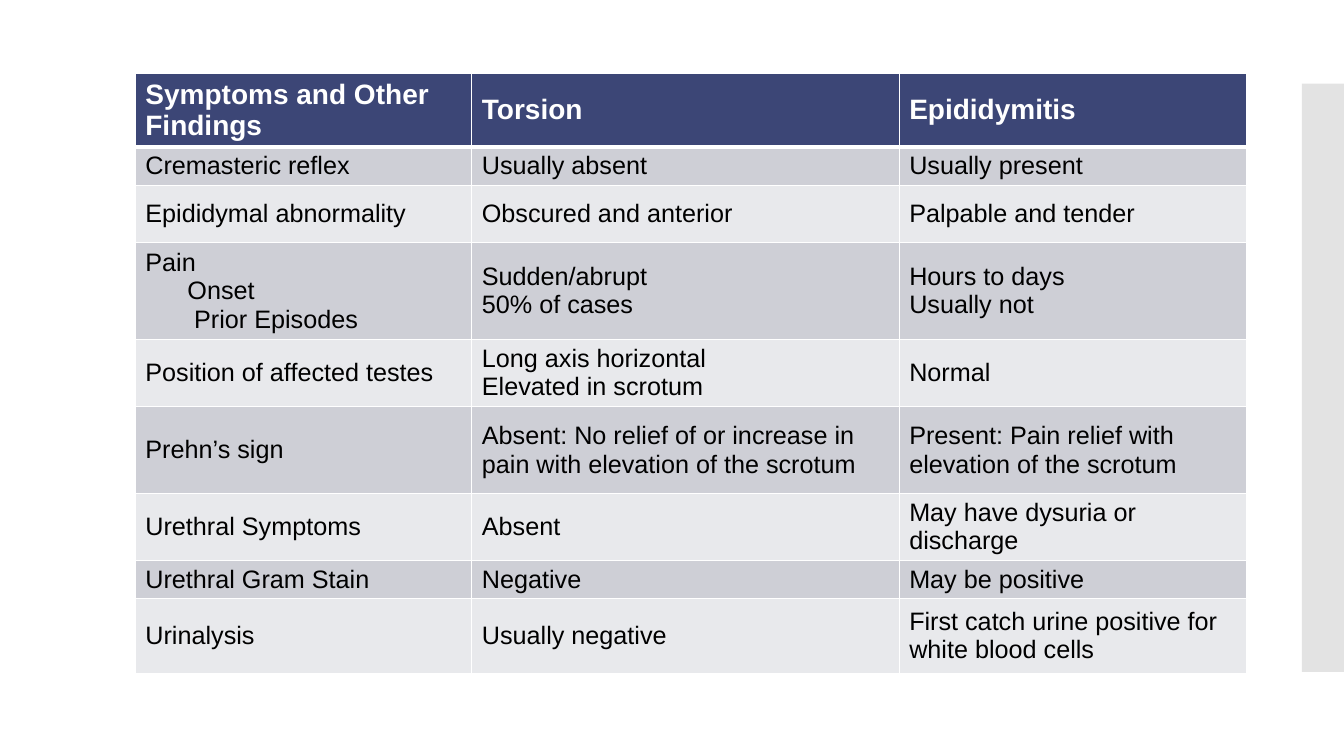
import dataclasses

import lxml.etree
import pptx
import pptx.dml.color
import pptx.enum.shapes
import pptx.enum.text
import pptx.oxml.ns
import pptx.util
from pptx.util import Cm


@dataclasses.dataclass(frozen=True)
class Theme:
    font: str = "Arial"
    header_size: int = 20
    body_size: int = 18
    header_fill: str = "3C4676"
    bands: tuple = ("CECFD6", "E8E9EC")
    white: str = "FFFFFF"
    black: str = "000000"
    sidebar: str = "C8C8C8"


THEME = Theme()

COLUMN_WIDTHS = (8.48, 10.77, 8.76)
ROW_HEIGHTS = (1.85, 0.97, 1.45, 2.43, 1.7, 2.19, 1.68, 0.97, 1.88)
FINDINGS = (
    ("Symptoms and Other Findings", "Torsion", "Epididymitis"),
    ("Cremasteric reflex", "Usually absent", "Usually present"),
    ("Epididymal abnormality", "Obscured and anterior", "Palpable and tender"),
    ("Pain\nOnset\nPrior Episodes", "Sudden/abrupt\n50% of cases",
     "Hours to days\nUsually not"),
    ("Position of affected testes", "Long axis horizontal\nElevated in scrotum",
     "Normal"),
    ("Prehn’s sign",
     "Absent: No relief of or increase in pain with elevation of the scrotum",
     "Present: Pain relief with elevation of the scrotum"),
    ("Urethral Symptoms", "Absent", "May have dysuria or discharge"),
    ("Urethral Gram Stain", "Negative", "May be positive"),
    ("Urinalysis", "Usually negative",
     "First catch urine positive for white blood cells"),
)
INDENTS = {"Onset": 1.06, "Prior Episodes": 1.23}


def rgb(code):
    return pptx.dml.color.RGBColor.from_string(code)


def add_child(parent, tag, **attributes):
    return lxml.etree.SubElement(parent, pptx.oxml.ns.qn(tag), attributes)


def write_text(frame, text, *, size, color, bold=False):
    """Write one paragraph per line, indenting the sub-items."""
    for index, line in enumerate(text.split("\n")):
        para = frame.paragraphs[0] if index == 0 else frame.add_paragraph()
        if line in INDENTS:
            para._p.get_or_add_pPr().set("marL", str(Cm(INDENTS[line])))
        span = para.add_run()
        span.text = line
        span.font.name = THEME.font
        span.font.size = pptx.util.Pt(size)
        span.font.bold = bold
        span.font.color.rgb = rgb(color)


def set_borders(cell, **widths):
    """Draw white cell borders; widths in points, keyed by side."""
    properties = cell._tc.get_or_add_tcPr()
    for position, (side, width) in enumerate(widths.items()):
        line = add_child(properties, f"a:ln{side}", w=str(pptx.util.Pt(width)))
        fill = add_child(line, "a:solidFill")
        add_child(fill, "a:srgbClr", val=THEME.white)
        properties.insert(position, line)


def add_sidebar(page, left, top, width, height):
    box = page.shapes.add_shape(
        pptx.enum.shapes.MSO_SHAPE.RECTANGLE, left, top, width, height)
    box.shadow.inherit = False
    box.line.fill.background()
    box.fill.solid()
    box.fill.fore_color.rgb = rgb(THEME.sidebar)
    color = box._element.spPr.find(".//" + pptx.oxml.ns.qn("a:srgbClr"))
    add_child(color, "a:alpha", val="50000")


def add_findings_table(page, left, top, width, height):
    table = page.shapes.add_table(
        len(FINDINGS), len(COLUMN_WIDTHS), left, top, width, height).table
    for column, share in zip(table.columns, COLUMN_WIDTHS):
        column.width = int(width * share / sum(COLUMN_WIDTHS))
    for row, share in zip(table.rows, ROW_HEIGHTS):
        row.height = int(height * share / sum(ROW_HEIGHTS))

    for row_index, texts in enumerate(FINDINGS):
        header = row_index == 0
        for column_index, text in enumerate(texts):
            cell = table.cell(row_index, column_index)
            cell.vertical_anchor = pptx.enum.text.MSO_ANCHOR.MIDDLE
            cell.fill.solid()
            cell.fill.fore_color.rgb = rgb(
                THEME.header_fill if header else THEME.bands[(row_index - 1) % 2])
            set_borders(cell, L=1, R=1, T=3 if row_index == 1 else 1,
                        B=3 if header else 1)
            write_text(cell.text_frame, text, bold=header,
                       size=THEME.header_size if header else THEME.body_size,
                       color=THEME.white if header else THEME.black)


def main():
    deck = pptx.Presentation()
    deck.slide_width, deck.slide_height = Cm(33.87), Cm(19.05)
    page = deck.slides.add_slide(deck.slide_layouts.get_by_name("Blank"))

    # Grey strip on the right edge
    add_sidebar(page, Cm(32.81), Cm(2.11), Cm(1.06), Cm(14.82))

    # Comparison of findings
    add_findings_table(page, Cm(3.41), Cm(1.85),
                       Cm(sum(COLUMN_WIDTHS)), Cm(sum(ROW_HEIGHTS)))

    deck.save("out.pptx")


if __name__ == "__main__":
    main()
